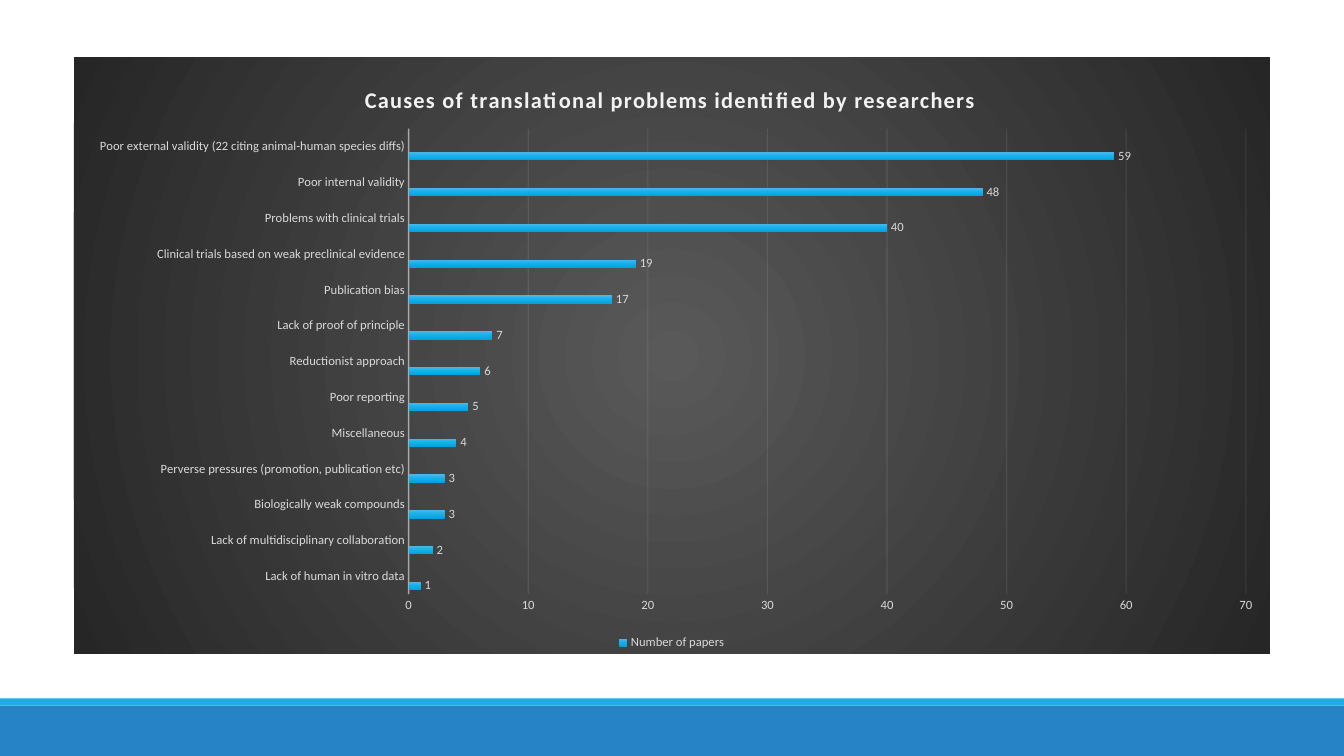
from lxml import etree
from pptx import Presentation
from pptx import util as u
from pptx.chart import data as chart_data
from pptx.dml.color import RGBColor
from pptx.enum import chart as ch
from pptx.enum import shapes
from pptx.oxml import parse_xml
from pptx.oxml.ns import nsdecls, qn

FONT = "Calibri"
PALE = "D9D9D9"
WHITISH = "F2F2F2"

PAPERS_BY_CAUSE = [
    ("Lack of human in vitro data", 1),
    ("Lack of multidisciplinary collaboration", 2),
    ("Biologically weak compounds", 3),
    ("Perverse pressures (promotion, publication etc)", 3),
    ("Miscellaneous", 4),
    ("Poor reporting", 5),
    ("Reductionist approach", 6),
    ("Lack of proof of principle", 7),
    ("Publication bias", 17),
    ("Clinical trials based on weak preclinical evidence", 19),
    ("Problems with clinical trials", 40),
    ("Poor internal validity", 48),
    ("Poor external validity (22 citing animal-human species diffs)", 59),
]
SERIES_STOPS = {
    "Number of papers": ["4FB6E9", "12B1EE", "06A2DD"],
    "Series 2": ["5191D0", "1E84CE", "1477BE"],
    "Column2": ["51CED6", "20CBD4", "15BBC4"],
}


def rgb(hex_color):
    return RGBColor.from_string(hex_color)


def gradient(stops, direction):
    """Evenly spaced gradient fill followed by an empty outline."""
    step = 100000 // (len(stops) - 1)
    marks = "".join(f'<a:gs pos="{i * step}"><a:srgbClr val="{color}"/></a:gs>'
                    for i, color in enumerate(stops))
    return f"<a:gradFill><a:gsLst>{marks}</a:gsLst>{direction}</a:gradFill><a:ln><a:noFill/></a:ln>"


def shape_properties(content):
    return parse_xml(f'<c:spPr {nsdecls("c", "a")}>{content}</c:spPr>')


def layout(**places):
    modes = "".join(f'<c:{axis}Mode val="edge"/>' for axis in "xy")
    values = "".join(f'<c:{key} val="{value}"/>' for key, value in places.items())
    target = '<c:layoutTarget val="inner"/>' if "w" in places else ""
    return parse_xml(f'<c:layout {nsdecls("c")}><c:manualLayout>{target}{modes}{values}'
                     "</c:manualLayout></c:layout>")


class SlideBuilder:
    def __init__(self, slide):
        self.slide = slide

    def style(self, font, size=9, color=PALE, bold=False):
        font.name, font.size, font.bold = FONT, u.Pt(size), bold
        font.color.rgb = rgb(color)

    def line(self, line_format, width, opacity):
        line_format.width = u.Pt(width)
        line_format.color.rgb = rgb(WHITISH)
        for color in line_format._ln.iter(qn("a:srgbClr")):
            etree.SubElement(color, qn("a:alpha")).set("val", str(opacity * 1000))

    def band(self, top, height, color):
        band = self.slide.shapes.add_shape(
            shapes.MSO_SHAPE.RECTANGLE, 0, u.Cm(top), u.Cm(33.87), u.Cm(height))
        band.shadow.inherit = False
        band.fill.solid()
        band.fill.fore_color.rgb = rgb(color)
        band.line.fill.background()

    def bar_chart(self, left, top, width, height):
        causes = chart_data.CategoryChartData()
        causes.categories = [cause for cause, _ in PAPERS_BY_CAUSE]
        for i, name in enumerate(SERIES_STOPS):
            causes.add_series(name, [None if i else count for _, count in PAPERS_BY_CAUSE])
        chart = self.slide.shapes.add_chart(
            ch.XL_CHART_TYPE.BAR_CLUSTERED, u.Cm(left), u.Cm(top),
            u.Cm(width), u.Cm(height), causes).chart
        self.style(chart.font)

        # Dark radial background behind a clear plot area
        radial = ('<a:path path="circle"><a:fillToRect l="50000" t="50000" '
                  'r="50000" b="50000"/></a:path>')
        root = chart._chartSpace
        root.find(qn("c:chart")).addnext(
            shape_properties(gradient(["595959", "262626"], radial)))
        plot_area = root.find(".//" + qn("c:plotArea"))
        plot_area.append(shape_properties("<a:noFill/>"))
        for old in plot_area.findall(qn("c:layout")):
            plot_area.remove(old)
        plot_area.insert(0, layout(x=0.28, y=0.12, w=0.7, h=0.78))

        self.title(chart, "Causes of translational problems identified by researchers")
        self.axes(chart)
        self.bars(chart.plots[0])
        self.legend(chart, hidden=(0, 1))

    def title(self, chart, wording):
        title = chart.chart_title
        heading = title.text_frame.paragraphs[0].add_run()
        heading.text = wording
        self.style(heading.font, 16, WHITISH, True)
        heading._r.get_or_add_rPr().set("spc", "100")
        element = title._element
        for old in element.findall(qn("c:layout")):
            element.remove(old)
        element.find(qn("c:tx")).addnext(layout(x=0.24, y=0.04))
        title.include_in_layout = False

    def axes(self, chart):
        for axis in (chart.category_axis, chart.value_axis):
            axis.major_tick_mark = axis.minor_tick_mark = ch.XL_TICK_MARK.NONE
            self.style(axis.tick_labels.font)
        self.line(chart.category_axis.format.line, 1, 54)
        papers = chart.value_axis
        papers.minimum_scale, papers.maximum_scale, papers.major_unit = 0, 70, 10
        papers.format.line.fill.background()
        self.line(papers.major_gridlines.format.line, 0.75, 10)

    def bars(self, plot):
        plot.gap_width, plot.overlap = 115, -20
        plot.vary_by_categories = False
        for series, stops in zip(plot.series, SERIES_STOPS.values()):
            series.format.fill.background()
            properties = series._element.find(qn("c:spPr"))
            properties.getparent().replace(properties, shape_properties(
                gradient(stops, '<a:lin ang="5400000" scaled="0"/>')))
            labels = series.data_labels
            labels.show_value = True
            labels.position = ch.XL_LABEL_POSITION.OUTSIDE_END
            self.style(labels.font)

    def legend(self, chart, hidden):
        chart.has_legend = True
        legend = chart.legend
        legend.position = ch.XL_LEGEND_POSITION.BOTTOM
        legend.include_in_layout = False
        self.style(legend.font)
        position = legend._element.find(qn("c:legendPos"))
        for index in reversed(hidden):
            position.addnext(parse_xml(
                f'<c:legendEntry {nsdecls("c")}><c:idx val="{index}"/>'
                '<c:delete val="1"/></c:legendEntry>'))


def main():
    deck = Presentation()
    deck.slide_width, deck.slide_height = u.Cm(33.87), u.Cm(19.05)
    builder = SlideBuilder(deck.slides.add_slide(deck.slide_layouts[6]))

    # Footer bands
    builder.band(17.78, 1.27, "2683C6")
    builder.band(17.6, 0.18, "1CADE4")

    # Causes chart
    builder.bar_chart(1.86, 1.44, 30.14, 15.04)

    deck.save("out.pptx")


if __name__ == "__main__":
    main()
